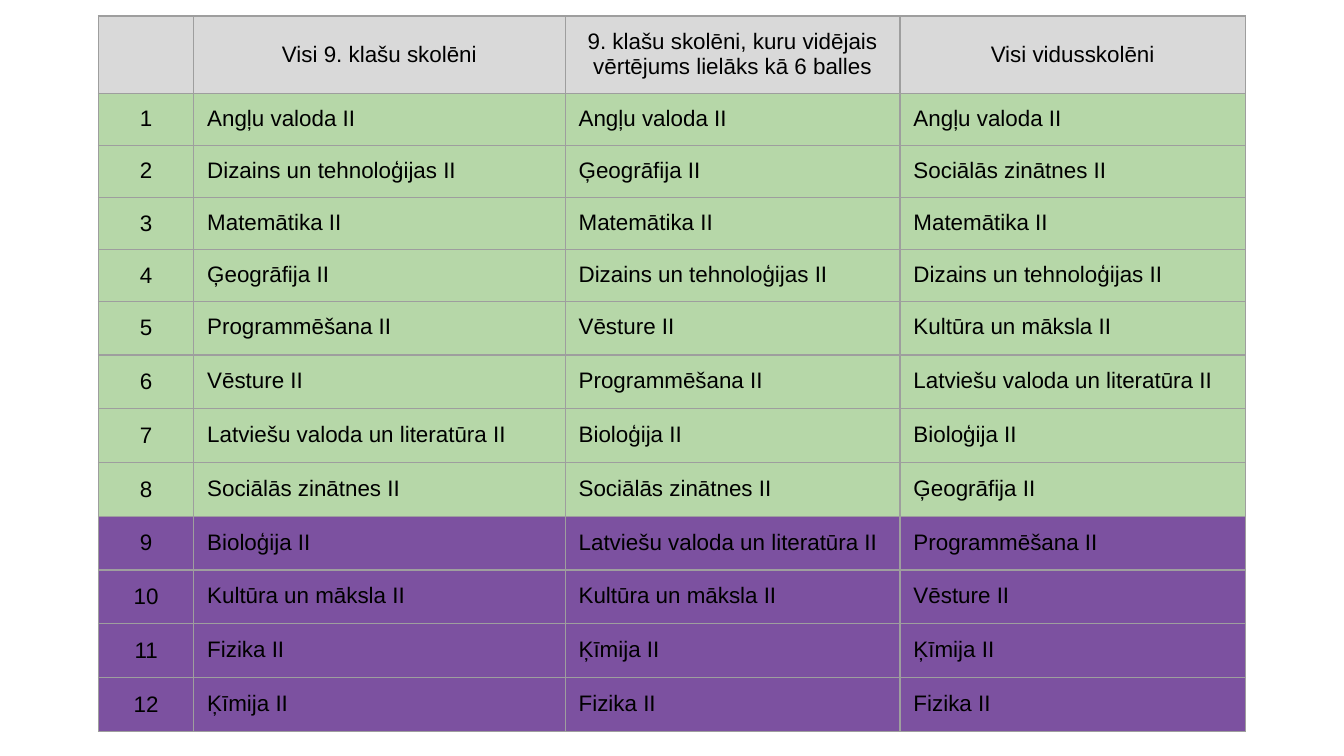
"""Build a slide with a table ranking school subjects for three pupil groups."""
from lxml import etree
from pptx import Presentation
from pptx.dml.color import RGBColor
from pptx.enum.text import MSO_ANCHOR, PP_ALIGN
from pptx.oxml.ns import qn
from pptx.util import Pt

CENTER, LEFT = PP_ALIGN.CENTER, PP_ALIGN.LEFT
MIDDLE, TOP = MSO_ANCHOR.MIDDLE, MSO_ANCHOR.TOP
BLACK = RGBColor(0x00, 0x00, 0x00)
GREY = RGBColor(0xD9, 0xD9, 0xD9)
GREEN = RGBColor(0xB6, 0xD7, 0xA8)
PURPLE = RGBColor(0x7C, 0x51, 0xA0)
BORDER = RGBColor(0x9E, 0x9E, 0x9E)

HEADERS = ["", "Visi 9. klašu skolēni",
           "9. klašu skolēni, kuru vidējais vērtējums lielāks kā 6 balles",
           "Visi vidusskolēni"]
SUBJECTS = [
    ("Angļu valoda", "Angļu valoda", "Angļu valoda"),
    ("Dizains un tehnoloģijas", "Ģeogrāfija", "Sociālās zinātnes"),
    ("Matemātika", "Matemātika", "Matemātika"),
    ("Ģeogrāfija", "Dizains un tehnoloģijas", "Dizains un tehnoloģijas"),
    ("Programmēšana", "Vēsture", "Kultūra un māksla"),
    ("Vēsture", "Programmēšana", "Latviešu valoda un literatūra"),
    ("Latviešu valoda un literatūra", "Bioloģija", "Bioloģija"),
    ("Sociālās zinātnes", "Sociālās zinātnes", "Ģeogrāfija"),
    ("Bioloģija", "Latviešu valoda un literatūra", "Programmēšana"),
    ("Kultūra un māksla", "Kultūra un māksla", "Vēsture"),
    ("Fizika", "Ķīmija", "Ķīmija"),
    ("Ķīmija", "Fizika", "Fizika"),
]
COL_WIDTHS = [51, 199, 179.4, 185]
ROW_HEIGHTS = [41.2] + [27.8] * 4 + [28.8] * 8
PADDING = Pt(7.2)


def add_borders(cell):
    tcPr = cell._tc.get_or_add_tcPr()
    for side in ("a:lnL", "a:lnR", "a:lnT", "a:lnB"):
        ln = etree.SubElement(tcPr, qn(side), w=str(Pt(0.75)))
        fill = etree.SubElement(ln, qn("a:solidFill"))
        etree.SubElement(fill, qn("a:srgbClr"), val=str(BORDER))


def fill_cell(cell, text, *, fill, align=LEFT, anchor=TOP):
    add_borders(cell)
    cell.fill.solid()
    cell.fill.fore_color.rgb = fill
    cell.margin_left = cell.margin_right = PADDING
    cell.margin_top = cell.margin_bottom = PADDING
    cell.vertical_anchor = anchor
    p = cell.text_frame.paragraphs[0]
    p.alignment = align
    p.font.size = Pt(12)
    if text:
        r = p.add_run()
        r.text = text
        r.font.name = "Arial"
        r.font.size = Pt(12)
        r.font.color.rgb = BLACK


prs = Presentation()
prs.slide_width, prs.slide_height = Pt(720), Pt(405)
s = prs.slides.add_slide(prs.slide_layouts[6])

table = s.shapes.add_table(len(ROW_HEIGHTS), len(COL_WIDTHS), Pt(52.8), Pt(8.6),
                           Pt(sum(COL_WIDTHS)), Pt(sum(ROW_HEIGHTS))).table
for col, width in zip(table.columns, COL_WIDTHS):
    col.width = Pt(width)
for row, height in zip(table.rows, ROW_HEIGHTS):
    row.height = Pt(height)

for c, header in enumerate(HEADERS):
    fill_cell(table.cell(0, c), header, fill=GREY, align=CENTER, anchor=MIDDLE)

for rank, subjects in enumerate(SUBJECTS, start=1):
    color = GREEN if rank <= 8 else PURPLE
    fill_cell(table.cell(rank, 0), str(rank), fill=color, align=CENTER, anchor=MIDDLE)
    for c, subject in enumerate(subjects, start=1):
        fill_cell(table.cell(rank, c), f"{subject} II", fill=color)

prs.save("out.pptx")
